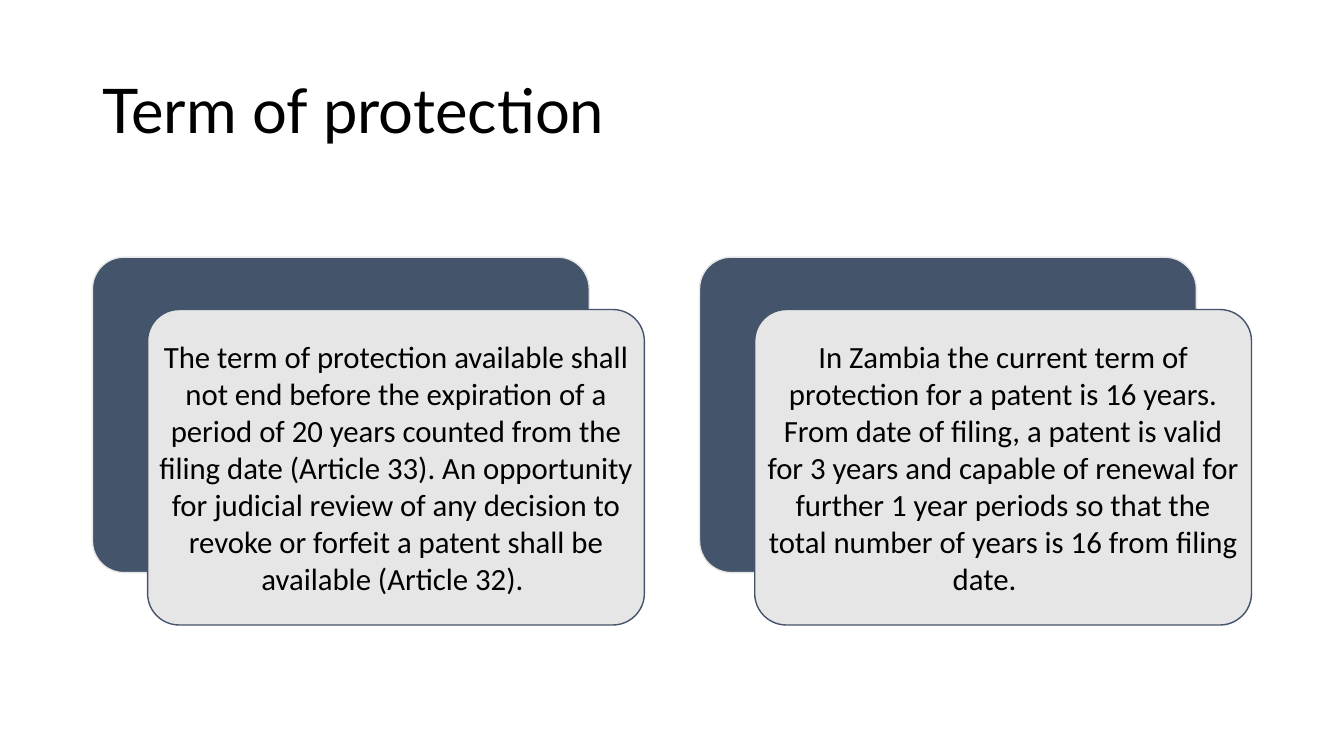
from pptx import Presentation
from pptx.dml.color import RGBColor
from pptx.enum.shapes import MSO_SHAPE
from pptx.enum.text import MSO_ANCHOR, PP_ALIGN
from pptx.util import Cm, Pt

ROUNDED = MSO_SHAPE.ROUNDED_RECTANGLE
MIDDLE = MSO_ANCHOR.MIDDLE
LEFT, CENTER = PP_ALIGN.LEFT, PP_ALIGN.CENTER

BLACK = RGBColor(0x00, 0x00, 0x00)
SLATE = RGBColor(0x44, 0x54, 0x6A)
SILVER = RGBColor(0xE7, 0xE6, 0xE6)

CARD_LEFT, CARD_TOP = Cm(2.33), Cm(6.48)
CARD_WIDTH, CARD_HEIGHT = Cm(12.52), Cm(7.95)
CARD_PITCH = Cm(15.3)
FRONT_DX, FRONT_DY = Cm(1.39), Cm(1.32)

TITLE_BOX = {"left": Cm(2.33), "top": Cm(1.02), "width": Cm(29.21), "height": Cm(3.68)}
TITLE_FONT = {"name": "Lato", "size": Pt(44), "bold": False}
BODY_FONT = {"name": "Calibri", "size": Pt(22)}
TITLE_PARAGRAPH = {"alignment": LEFT, "line_spacing": 0.9}
BODY_PARAGRAPH = {"alignment": CENTER, "line_spacing": 1.0}
TITLE_FRAME = {"word_wrap": True, "vertical_anchor": MIDDLE}
BODY_FRAME = {
    **TITLE_FRAME,
    "margin_left": Cm(0),
    "margin_right": Cm(0),
    "margin_top": Cm(0),
    "margin_bottom": Cm(0),
}

TERMS = [
    "The term of protection available shall not end before the expiration of a "
    "period of 20 years counted from the filing date (Article 33). An opportunity "
    "for judicial review of any decision to revoke or forfeit a patent shall be "
    "available (Article 32). ",
    "In Zambia the current term of protection for a patent is 16 years. From date "
    "of filing, a patent is valid for 3 years and capable of renewal for further "
    "1 year periods so that the total number of years is 16 from filing date.\t",
]


def apply(target, values):
    for name, value in values.items():
        setattr(target, name, value)


def write_text(sp, text, frame, paragraph, font):
    tf = sp.text_frame
    apply(tf, frame)
    p = tf.paragraphs[0]
    apply(p, paragraph)
    r = p.add_run()
    r.text = text
    apply(r.font, font)
    r.font.color.rgb = BLACK


def add_panel(s, left, top, fill, line):
    sp = s.shapes.add_shape(ROUNDED, left, top, CARD_WIDTH, CARD_HEIGHT)
    sp.adjustments[0] = 0.1
    sp.shadow.inherit = False
    sp.fill.solid()
    sp.fill.fore_color.rgb = fill
    sp.line.color.rgb = line
    sp.line.width = Pt(1)
    return sp


def add_card(s, left, text):
    add_panel(s, left, CARD_TOP, SLATE, SILVER)
    front = add_panel(s, left + FRONT_DX, CARD_TOP + FRONT_DY, SILVER, SLATE)
    write_text(front, text, BODY_FRAME, BODY_PARAGRAPH, BODY_FONT)


def add_title(s, text):
    title = s.shapes.title
    apply(title, TITLE_BOX)
    write_text(title, text, TITLE_FRAME, TITLE_PARAGRAPH, TITLE_FONT)


def main():
    prs = Presentation()
    prs.slide_width, prs.slide_height = Cm(33.87), Cm(19.05)
    s = prs.slides.add_slide(prs.slide_layouts.get_by_name("Title Only"))
    add_title(s, "Term of protection")
    for i, text in enumerate(TERMS):
        add_card(s, CARD_LEFT + i * CARD_PITCH, text)
    prs.save("out.pptx")


if __name__ == "__main__":
    main()
